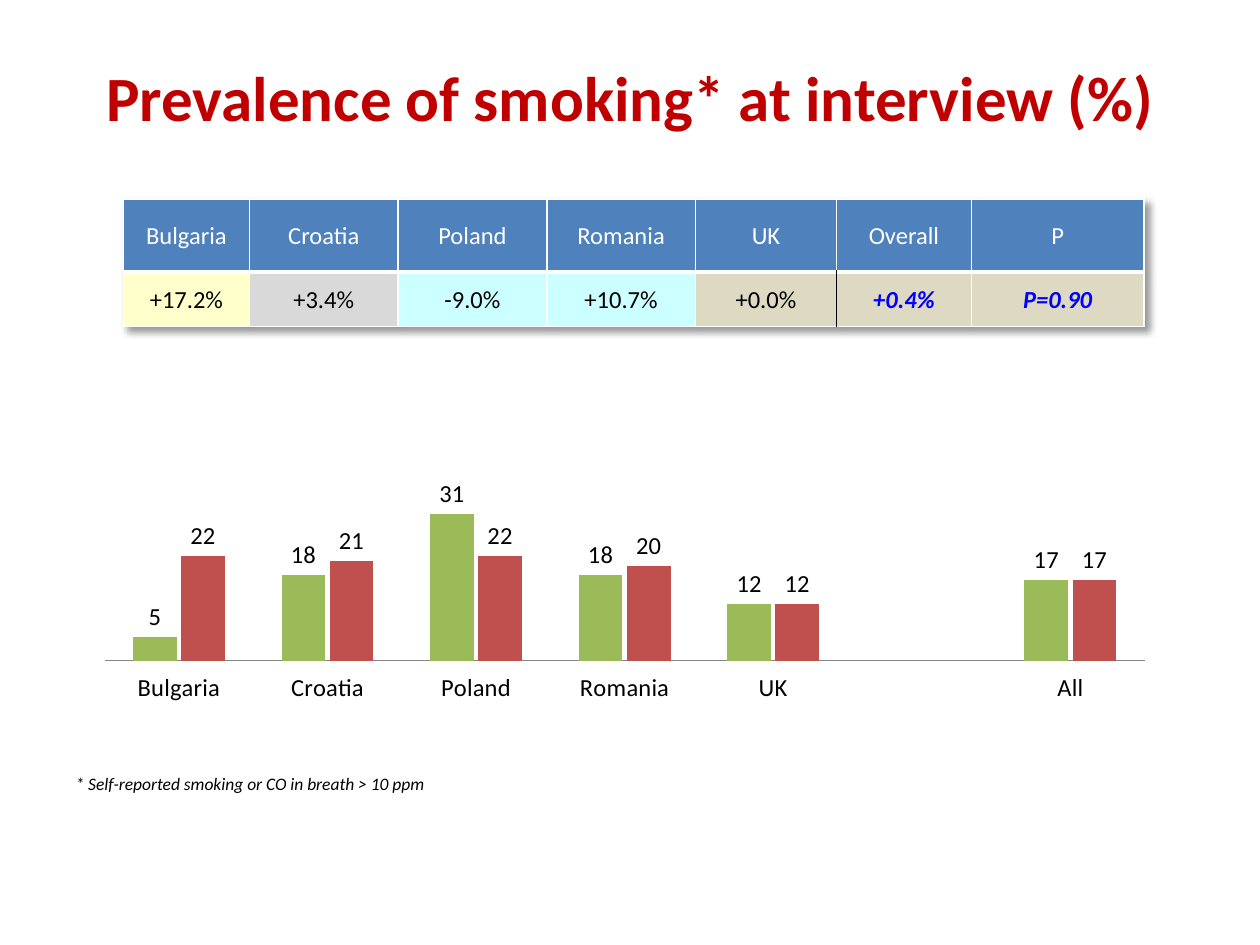
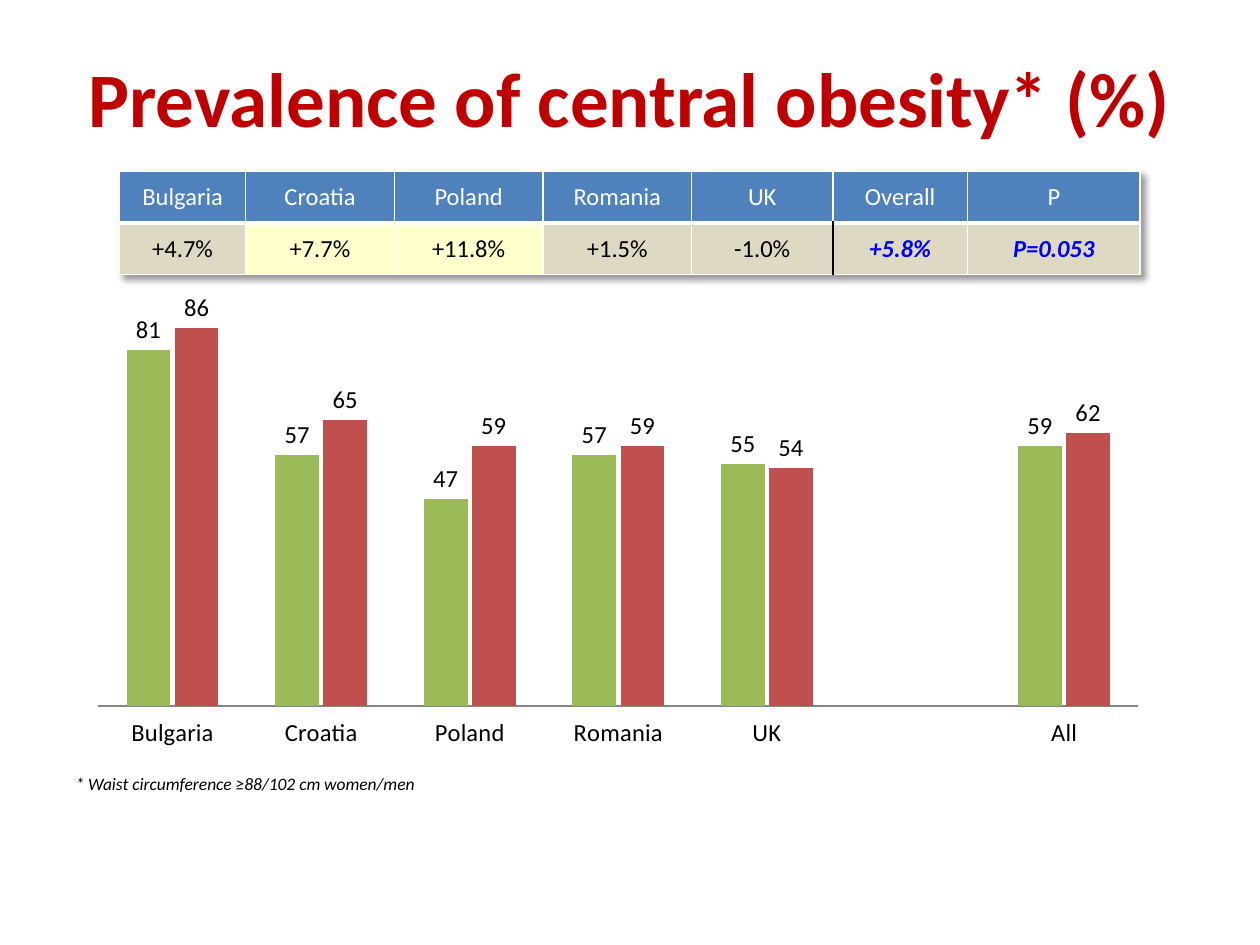
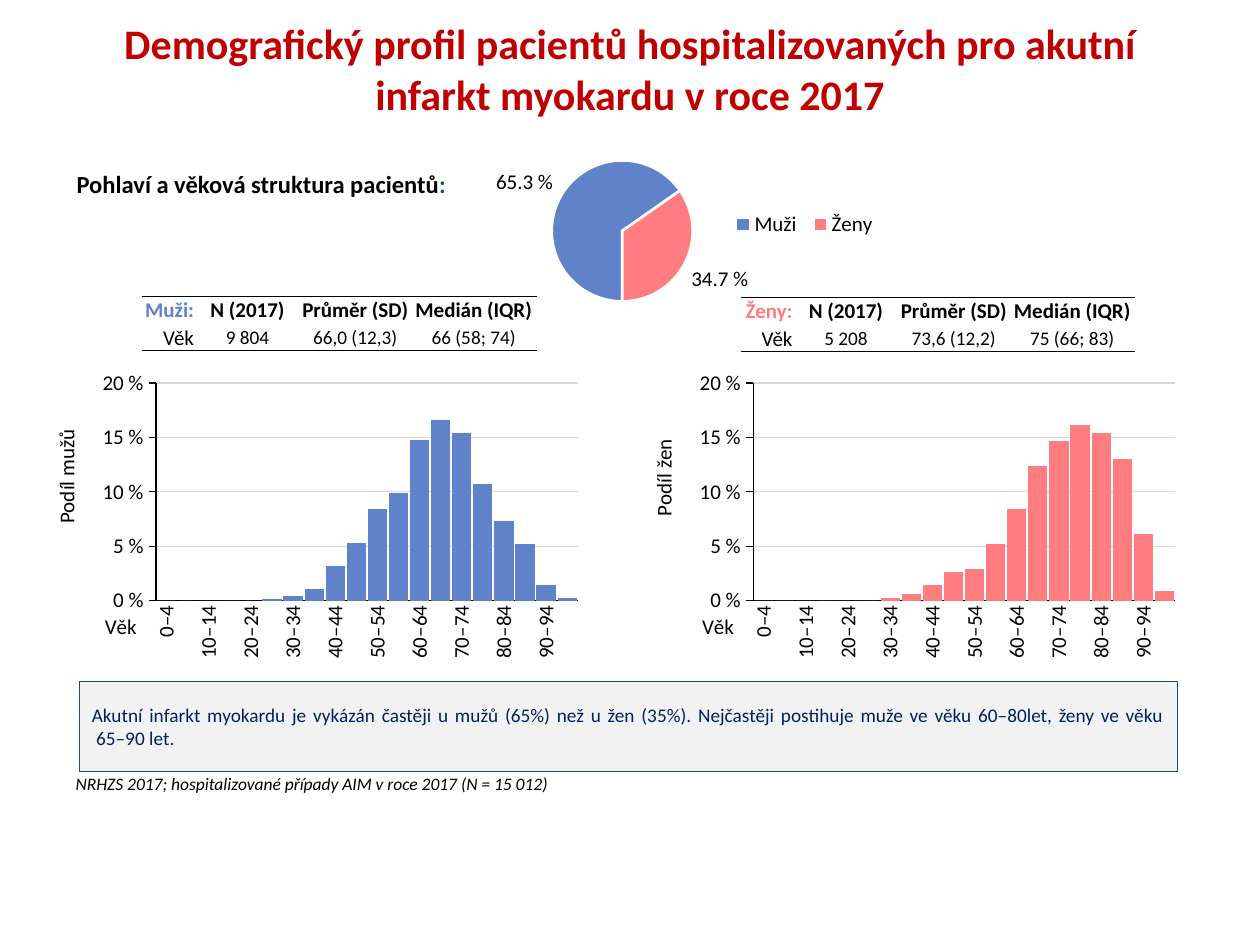
from lxml import etree
from pptx import Presentation
from pptx import util as u
from pptx.chart.data import CategoryChartData
from pptx.dml.color import RGBColor
from pptx.enum import chart as ch, shapes, text
from pptx.oxml.ns import qn

PX = 9144
HUES = {
    "black": "000000", "white": "FFFFFF", "red": "C00000", "head": "4F81BD",
    "sand": "DDD9C3", "cream": "FFFFCC", "gray": "D9D9D9", "aqua": "CCFFFF",
    "blue": "0000FF", "green": "9BBB59", "brick": "C0504D", "axis": "868686",
    "men": "5F82C9", "women": "FF7C80", "pale": "F2F2F2", "navy": "1F497D",
    "deep": "002060",
}
PLAIN = "{2D5ABB26-0587-4C30-8999-92F81FD0307C}"
LANDS = ["Bulgaria", "Croatia", "Poland", "Romania", "UK"]
AGES = [f"{age}–{age + 4}" for age in range(0, 95, 5)] + ["95+"]
CENTER, RIGHT = text.PP_ALIGN.CENTER, text.PP_ALIGN.RIGHT


def px(*nums):
    """Turn px lengths into EMU."""
    return [u.Emu(n * PX) for n in nums]


def rgb(hue):
    """Look up a named colour."""
    return RGBColor.from_string(HUES[hue])


def apply(item, **vals):
    """Set every given attribute on an item."""
    for name, val in vals.items():
        setattr(item, name, val)


def ink(font, size, hue="black", **vals):
    """Format a font."""
    apply(font, name="Calibri", size=u.Pt(size), **vals)
    font.color.rgb = rgb(hue)


def paint(part, hue):
    """Fill a part with one colour."""
    part.fill.solid()
    part.fill.fore_color.rgb = rgb(hue)


def rule(line, hue, width):
    """Colour a line and set its width."""
    line.color.rgb = rgb(hue)
    line.width = u.Pt(width)


def write(frame, words, size, hue="black", align=None, **vals):
    """Put one formatted paragraph into a text frame."""
    frame.text = words
    para = frame.paragraphs[0]
    if align is not None:
        para.alignment = align
    for run in para.runs:
        ink(run.font, size, hue, **vals)
    for brk in para._p.findall(qn("a:br")):
        etree.SubElement(brk, qn("a:rPr"), sz=str(size * 100))
    return para


def place(part, index, inner=False, **spot):
    """Give a chart part a manual layout."""
    for old in part.findall(qn("c:layout")):
        part.remove(old)
    outer = etree.Element(qn("c:layout"))
    man = etree.SubElement(outer, qn("c:manualLayout"))
    marks = {"layoutTarget": "inner"} if inner else {}
    marks |= {"xMode": "edge", "yMode": "edge", **spot}
    for name, val in marks.items():
        etree.SubElement(man, qn("c:" + name), val=str(val))
    part.insert(index, outer)


def edge(cell, sides):
    """Draw the borders of a table cell."""
    props = cell._tc.get_or_add_tcPr()
    for side in "LRTB":
        if side in sides:
            hue, width = sides[side]
            line = etree.SubElement(props, qn("a:ln" + side), w=str(u.Pt(width)))
            fill = etree.SubElement(line, qn("a:solidFill"))
            etree.SubElement(fill, qn("a:srgbClr"), val=HUES[hue])


class Deck:
    """Holds the shared style and the current slide."""

    def __init__(self):
        """Start an empty deck."""
        self.prs = Presentation()
        self.prs.slide_width, self.prs.slide_height = px(1000, 750)

    def page(self, title, size, note, top=30, high=93):
        """Add a slide with its title and footnote."""
        self.now = self.prs.slides.add_slide(self.prs.slide_layouts[1])
        head, foot = self.now.placeholders
        for part, box in ((head, (50, top, 900, high)), (foot, (50, 580, 900, 55))):
            apply(part, **dict(zip(("left", "top", "width", "height"), px(*box))))
            part.text_frame.auto_size = text.MSO_AUTO_SIZE.NONE
        head.text_frame.vertical_anchor = text.MSO_ANCHOR.MIDDLE
        foot.text_frame.vertical_anchor = text.MSO_ANCHOR.BOTTOM
        write(head.text_frame, title, size, "red", CENTER, bold=True)
        para = write(foot.text_frame, note, 10, italic=True)
        para.space_before = u.Pt(0)
        props = para._p.get_or_add_pPr()
        props.set("marL", "0")
        props.set("indent", "0")
        etree.SubElement(props, qn("a:buNone"))

    def label(self, box, words, tail):
        """Add a bold heading with a coloured tail."""
        frame = self.now.shapes.add_textbox(*px(*box)).text_frame
        frame.word_wrap = True
        para = write(frame, words, 14, bold=True)
        run = para.add_run()
        run.text = tail
        ink(run.font, 14, "navy", bold=True)

    def panel(self, box, words):
        """Add a framed remark."""
        rect = self.now.shapes.add_shape(shapes.MSO_SHAPE.RECTANGLE, *px(*box))
        rect.shadow.inherit = False
        paint(rect, "pale")
        rule(rect.line, "navy", 0.25)
        rect.text_frame.vertical_anchor = text.MSO_ANCHOR.MIDDLE
        write(rect.text_frame, words, 11, "deep", text.PP_ALIGN.JUSTIFY)

    def table(self, left, top, cols, rows):
        """Add an unstyled table with given column and row sizes."""
        box = px(left, top, sum(cols), sum(rows))
        grid = self.now.shapes.add_table(len(rows), len(cols), *box).table
        apply(grid, first_row=False, horz_banding=False)
        grid._tbl.tblPr.find(qn("a:tableStyleId")).text = PLAIN
        for col, wide in zip(grid.columns, px(*cols)):
            col.width = wide
        for row, high in zip(grid.rows, px(*rows)):
            row.height = high
        return grid

    def cell(self, grid, row, col, words, fill, sides, tight=True, **look):
        """Fill in one table cell."""
        cell = grid.cell(row, col)
        if tight:
            side, base = px(1, 0)
            apply(cell, margin_left=side, margin_right=side,
                  margin_top=side, margin_bottom=base)
        cell.vertical_anchor = text.MSO_ANCHOR.MIDDLE
        edge(cell, sides)
        paint(cell, fill)
        write(cell.text_frame, words, **look)

    def change(self, left, top, rows, vals, fills):
        """Add the table of changes by country."""
        grid = self.table(left, top, [100, 118, 118, 118, 112, 107, 137], rows)
        props = grid._tbl.tblPr
        glow = etree.Element(qn("a:effectLst"))
        shade = etree.SubElement(glow, qn("a:outerShdw"), blurRad="50800",
                                 dist="38100", dir="2700000", algn="tl")
        tint = etree.SubElement(shade, qn("a:srgbClr"), val=HUES["black"])
        etree.SubElement(tint, qn("a:alpha"), val="40000")
        props.insert(0, glow)
        thin = dict.fromkeys("LRTB", ("white", 1))
        for col, name in enumerate(LANDS + ["Overall", "P"]):
            self.cell(grid, 0, col, name, "head", thin | {"B": ("white", 3)},
                      tight=False, size=14, hue="white", align=CENTER)
            split = {4: {"R": ("black", 1)}, 5: {"L": ("black", 1)}}.get(col, {})
            key = col > 4
            self.cell(grid, 1, col, vals[col], fills[col],
                      thin | {"T": ("white", 3)} | split, size=14,
                      hue="blue" if key else "black", align=CENTER,
                      bold=key, italic=key)

    def stats(self, left, top, name, hue, vals):
        """Add the age summary of one sex."""
        grid = self.table(left, top, [42, 83, 88, 100], [22, 21])
        heads = [name, "N (2017)", "Průměr (SD)", "Medián (IQR)"]
        for row, words in enumerate((heads, ["Věk"] + vals)):
            sides = {"TB"[row]: ("black", 0.75)}
            for col, word in enumerate(words):
                self.cell(grid, row, col, word, "white", sides,
                          size=11 if row and col else 12,
                          hue="black" if row or col else hue,
                          align=CENTER if col else RIGHT, bold=not row)

    def chart(self, kind, box, cats, rows, size, plot):
        """Add a chart with its plot area placed by hand."""
        data = CategoryChartData()
        data.categories = cats
        for num, vals in enumerate(rows, 1):
            data.add_series(f"Series {num}", vals)
        chart = self.now.shapes.add_chart(kind, *px(*box), data).chart
        apply(chart, has_title=False, has_legend=False)
        ink(chart.font, size)
        area = chart._chartSpace.chart.plotArea
        place(area, 0, True, **dict(zip("xywh", plot)))
        return chart

    def tags(self, plot, size, form):
        """Show values outside the ends."""
        plot.has_data_labels = True
        tags = plot.data_labels
        apply(tags, show_value=True, number_format=form,
              number_format_is_linked=False, position=ch.XL_LABEL_POSITION.OUTSIDE_END)
        ink(tags.font, size)

    def bars(self, box, cats, rows, hues, size, plot, gap, lap, top):
        """Add a column chart."""
        chart = self.chart(ch.XL_CHART_TYPE.COLUMN_CLUSTERED, box, cats, rows, size, plot)
        bars = chart.plots[0]
        apply(bars, gap_width=gap, overlap=lap, vary_by_categories=False)
        for ser, hue in zip(bars.series, hues):
            paint(ser.format, hue)
        apply(chart.value_axis, minimum_scale=0, maximum_scale=top,
              has_major_gridlines=False)
        chart.category_axis.major_tick_mark = ch.XL_TICK_MARK.NONE
        return chart

    def pairs(self, box, rows, plot):
        """Add paired columns by country."""
        chart = self.bars(box, LANDS + ["", "All"], rows, ["green", "brick"],
                          14, plot, 130, -10, 100)
        chart.value_axis.visible = False
        axis = chart.category_axis
        axis.tick_label_position = ch.XL_TICK_LABEL_POSITION.LOW
        rule(axis.format.line, "axis", 0.75)
        self.tags(chart.plots[0], 14, "0")

    def ages(self, left, vals, hue, name, rise):
        """Add the age histogram of one sex."""
        chart = self.bars((left, 287, 440, 254), AGES, [vals], [hue], 12,
                          (0.204, 0.067, 0.761, 0.68), 10, 0, 0.2)
        cat, val = chart.category_axis, chart.value_axis
        for axis, words, x, y in ((cat, "Věk", 0.105, 0.77), (val, name, 0.01, rise)):
            rule(axis.format.line, "black", 0.75)
            ink(axis.tick_labels.font, 12)
            title = axis.axis_title
            write(title.text_frame, words, 12, bold=False)
            place(title._element, 1, x=x, y=y)
        val.axis_title.text_frame._txBody.bodyPr.set("rot", "-5400000")
        apply(val, major_unit=0.05, has_major_gridlines=True,
              major_tick_mark=ch.XL_TICK_MARK.OUTSIDE)
        rule(val.major_gridlines.format.line, "gray", 0.75)
        apply(val.tick_labels, number_format=r"0\ %", number_format_is_linked=False)
        cat._element.txPr.bodyPr.set("rot", "-5400000")
        skip = etree.Element(qn("c:tickLblSkip"), val="2")
        cat._element.find(qn("c:noMultiLvlLbl")).addprevious(skip)

    def pie(self, box, cats, vals, hues):
        """Add the pie of both sexes."""
        chart = self.chart(ch.XL_CHART_TYPE.PIE, box, cats, [vals], 10,
                           (0.199, 0.102, 0.442, 0.622))
        pie = chart.plots[0]
        for num, hue in enumerate(hues):
            form = pie.series[0].points[num].format
            paint(form, hue)
            rule(form.line, "white", 1.5)
        self.tags(pie, 12, r"0.0\ %")
        turn = pie._element.find(qn("c:firstSliceAng"))
        if turn is None:
            turn = etree.SubElement(pie._element, qn("c:firstSliceAng"))
        turn.set("val", "180")
        chart.has_legend = True
        key = chart.legend
        apply(key, position=ch.XL_LEGEND_POSITION.BOTTOM, include_in_layout=False)
        ink(key.font, 12)
        place(key._element, 1, x=0.62, y=0.31, w=0.3, h=0.15)


def main():
    """Build the three slides."""
    deck = Deck()

    deck.page("Prevalence of smoking* at interview (%)", 36,
              "* Self-reported smoking or CO in breath > 10 ppm")
    deck.pairs((35, 132, 874, 438),
               [[5, 18, 31, 18, 12, None, 17], [22, 21, 22, 20, 12, None, 17]],
               (0.055, 0.038, 0.945, 0.858))
    deck.change(98, 158, [58, 43],
                ["+17.2%", "+3.4%", "-9.0%", "+10.7%", "+0.0%", "+0.4%", "P=0.90"],
                ["cream", "gray", "aqua", "aqua", "sand", "sand", "sand"])

    deck.page("Prevalence of central obesity* (%)", 44,
              "* Waist circumference ≥88/102 cm women/men")
    deck.pairs((30, 124, 874, 487),
               [[81, 57, 47, 57, 55, None, 59], [86, 65, 59, 59, 54, None, 62]],
               (0.055, 0.179, 0.945, 0.717))
    deck.change(95, 136, [41, 41],
                ["+4.7%", "+7.7%", "+11.8%", "+1.5%", "-1.0%", "+5.8%", "P=0.053"],
                ["sand", "cream", "cream", "sand", "sand", "sand", "sand"])

    deck.page("Demografický profil pacientů hospitalizovaných pro akutní "
              "infarkt myokardu v roce 2017", 24,
              "NRHZS 2017; hospitalizované případy AIM v roce 2017 (N = 15 012)",
              13, 82)
    deck.pie((320, 109, 414, 180), ["Muži", "Ženy"], [0.653, 0.347], ["men", "women"])
    deck.stats(113, 235, "Muži:", "men", ["9 804", "66,0 (12,3)", "66 (58; 74)"])
    deck.stats(588, 236, "Ženy:", "women", ["5 208", "73,6 (12,2)", "75 (66; 83)"])
    deck.label((51, 129, 340, 34), "Pohlaví a věková struktura pacientů", ":")
    deck.panel((63, 541, 871, 71),
               "Akutní infarkt myokardu je vykázán častěji u mužů (65%) než u žen (35%). "
               "Nejčastěji postihuje muže ve věku 60–80let, ženy ve věku\v 65–90 let.")
    men = [0, 0, 0, 0, 0, 0.001, 0.004, 0.011, 0.032, 0.053, 0.084, 0.099, 0.148,
           0.166, 0.154, 0.107, 0.073, 0.052, 0.014, 0.002]
    women = [0, 0, 0, 0, 0, 0, 0.002, 0.006, 0.014, 0.026, 0.029, 0.052, 0.084,
             0.124, 0.147, 0.161, 0.154, 0.13, 0.061, 0.009]
    deck.ages(34, men, "men", "Podíl mužů", 0.2)
    deck.ages(508, women, "women", "Podíl žen", 0.23)

    deck.prs.save("out.pptx")


if __name__ == "__main__":
    main()
